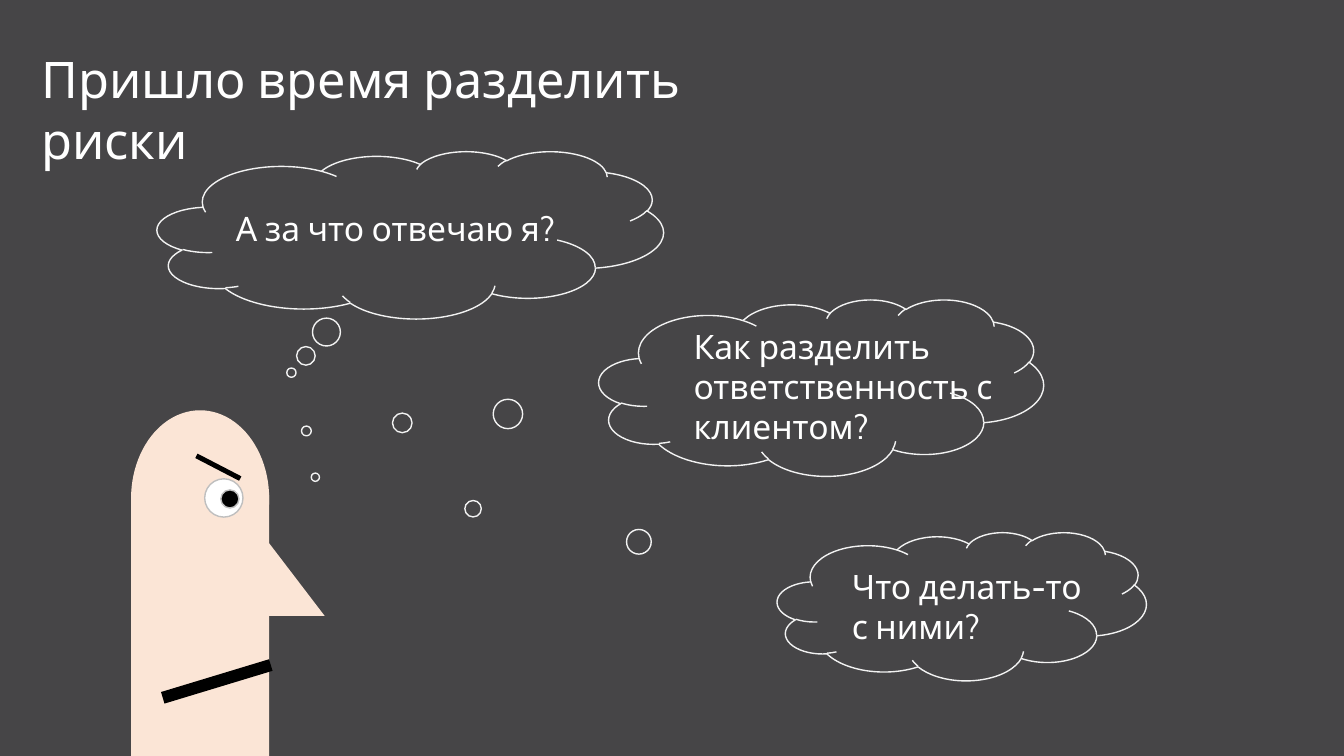
import pptx
import pptx.util
import pptx.dml.color
import pptx.enum.shapes
import pptx.enum.text

Inches, Pt = pptx.util.Inches, pptx.util.Pt
MSO = pptx.enum.shapes.MSO_SHAPE
SKIN, BLACK, WHITE, EYE_RIM, CLOUD = "FBE5D6", "000000", "FFFFFF", "BFBFBF", "F2F2F2"

prs = pptx.Presentation()
prs.slide_width, prs.slide_height = Inches(13.33), Inches(7.5)
slide = prs.slides.add_slide(prs.slide_layouts[5])


def paint(fmt, color):
    fmt.solid()
    fmt.fore_color.rgb = pptx.dml.color.RGBColor.from_string(color)


def write(sp, text, size):
    tf = sp.text_frame
    tf.word_wrap = True
    tf.auto_size = pptx.enum.text.MSO_AUTO_SIZE.NONE
    tf.vertical_anchor = pptx.enum.text.MSO_ANCHOR.TOP
    p = tf.paragraphs[0]
    p.text = text
    p.alignment = pptx.enum.text.PP_ALIGN.LEFT
    p.font.name, p.font.size = "Cabin", Pt(size)
    paint(p.font.fill, WHITE)


paint(slide.background.fill, "464547")

# Title
title = slide.shapes.title
title.left, title.top, title.width, title.height = map(Inches, (0.31, 0.43, 7.68, 1.3))
write(title, "Пришло время разделить риски", 36)

# Grumpy head: preset, box, rotation, fill, outline
head = [
    (MSO.RECTANGLE, (1.3, 4.91, 1.37, 2.59), 0, SKIN, None),
    (MSO.OVAL, (1.3, 4.07, 1.37, 1.75), 0, SKIN, None),
    (MSO.RIGHT_TRIANGLE, (2.67, 5.39, 0.55, 0.72), 0, SKIN, None),
    (MSO.RECTANGLE, (1.59, 6.7, 1.12, 0.12), 343.1, BLACK, None),
    (MSO.OVAL, (2.03, 4.75, 0.38, 0.38), 0, WHITE, EYE_RIM),
    (MSO.OVAL, (2.19, 4.86, 0.18, 0.18), 0, BLACK, EYE_RIM),
    (MSO.RECTANGLE, (2.14, 4.39, 0.05, 0.49), 117.4, BLACK, None),
]
face = slide.shapes.add_group_shape()
for preset, box, rotation, fill, outline in head:
    sp = face.shapes.add_shape(preset, *map(Inches, box))
    sp.shadow.inherit = False
    sp.rotation = rotation
    paint(sp.fill, fill)
    if outline:
        paint(sp.line.fill, outline)
        sp.line.width = Pt(1)
    else:
        sp.line.fill.background()

# Thoughts: text, text box, cloud box, tail position
thoughts = [
    ("А за что отвечаю я?", (2.24, 2.01, 3.83, 0.5), (1.56, 1.5, 5.02, 1.66), (-0.235, 0.824)),
    ("Как разделить ответственность с клиентом?", (6.78, 3.18, 3.38, 1.31),
     (5.94, 2.97, 4.41, 1.75), (-1.158, 0.246)),
    ("Что делать-то с ними?", (8.35, 5.56, 2.52, 0.91), (7.71, 5.28, 3.66, 1.47), (-1.752, -0.871)),
]
for text, text_box, cloud_box, tail in thoughts:
    write(slide.shapes.add_textbox(*map(Inches, text_box)), text, 24)
    cloud = slide.shapes.add_shape(MSO.CLOUD_CALLOUT, *map(Inches, cloud_box))
    cloud.shadow.inherit = False
    cloud.adjustments[0], cloud.adjustments[1] = tail
    cloud.fill.background()
    paint(cloud.line.fill, CLOUD)
    cloud.line.width = Pt(1)

prs.save("out.pptx")
